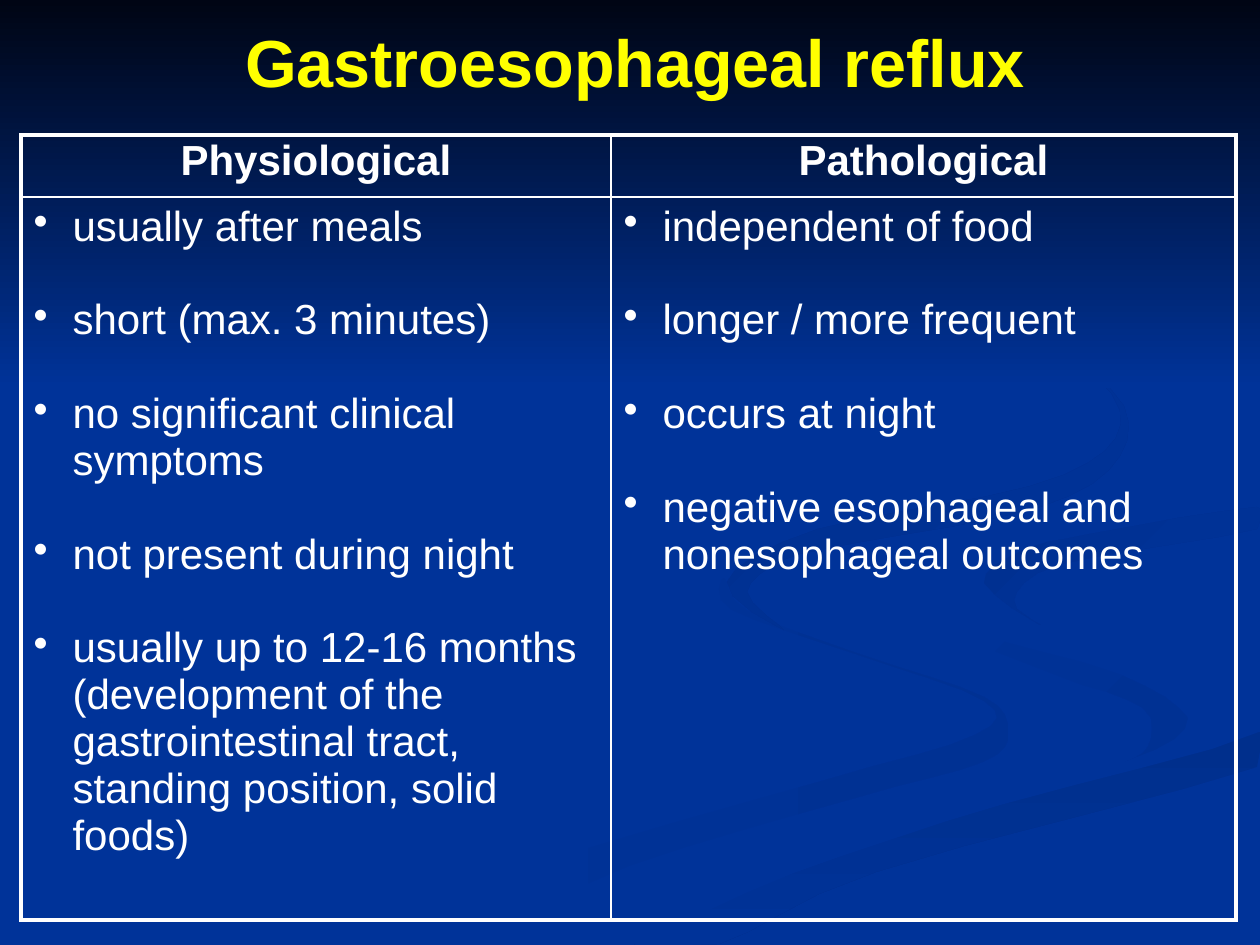
from lxml import etree
from pptx import Presentation
from pptx.dml.color import RGBColor
from pptx.enum.shapes import MSO_SHAPE
from pptx.enum.text import MSO_ANCHOR, PP_ALIGN
from pptx.oxml.ns import qn
from pptx.util import Emu, Pt

RECTANGLE = MSO_SHAPE.RECTANGLE
MIDDLE = MSO_ANCHOR.MIDDLE
CENTER, LEFT = PP_ALIGN.CENTER, PP_ALIGN.LEFT
SCALE = 914400 / 126
WHITE, YELLOW, BLUE = "FFFFFF", "FFFF00", "003399"
INDENT = 39
CURVE_STEPS = 4


def color(value):
    return RGBColor.from_string(value)


def write_text(paragraph, text, size=24, hue=WHITE, bold=False, align=LEFT):
    paragraph.alignment = align
    run = paragraph.add_run()
    run.text = text
    run.font.name = "Arial"
    run.font.size = Pt(size)
    run.font.bold = bold
    run.font.color.rgb = color(hue)


presentation = Presentation()
presentation.slide_width = Emu(round(1260 * SCALE))
presentation.slide_height = Emu(round(945 * SCALE))
slide = presentation.slides.add_slide(presentation.slide_layouts[6])
slide.background.fill.solid()
slide.background.fill.fore_color.rgb = color(BLUE)

ribbons = [
    (BLUE, "003193", 0, [
        (984, 697), (859, 654), (748, 611), (724, 578), (732, 610), (856, 654),
        (984, 701), (975, 735), (822, 781), (525, 869), (378, 944), (455, 944),
        (629, 866), (852, 799), (983, 762), (1008, 732)]),
    (BLUE, "003193", 45, [
        (1188, 718), (1119, 674), (955, 627), (912, 585), (931, 622), (1056, 675),
        (1143, 708), (1148, 747), (1126, 762), (1166, 747)]),
    ("002F8C", BLUE, 90, [
        (634, 944), (719, 944), (876, 872), (1257, 767), (1257, 732), (1004, 804),
        (794, 873)]),
    (BLUE, BLUE, 0, [
        (914, 585), (956, 627), (1120, 674), (1188, 718), (1124, 762), (887, 825),
        (601, 944), (634, 944), (794, 873), (1004, 804), (1259, 732), (1259, 678),
        (1068, 634), (984, 583), (1036, 547), (1259, 507), (1259, 488), (993, 532),
        (922, 562)]),
    ("003091", BLUE, 45, [
        (984, 583), (1041, 625), (1014, 600), (1062, 564), (1257, 529), (1257, 507),
        (1090, 534), (1021, 551)]),
    ("002F8E", BLUE, 45, [
        (861, 542), (1040, 507), (1120, 456), (1109, 387), (960, 294), (1096, 377),
        (1116, 438), (1031, 486), (818, 529), (727, 582), (784, 630), (747, 592),
        (786, 559)]),
]
backdrop = []
for start, end, angle, anchors in ribbons:
    outline = []
    for index, current in enumerate(anchors):
        before = anchors[index - 1]
        following, beyond = [anchors[(index + ahead) % len(anchors)] for ahead in (1, 2)]
        for step in range(CURVE_STEPS):
            t = step / CURVE_STEPS
            outline.append([
                (2 * b + (c - a) * t + (2 * a - 5 * b + 4 * c - d) * t ** 2
                 + (3 * b - a - 3 * c + d) * t ** 3) / 2
                for a, b, c, d in zip(before, current, following, beyond)])
    points = [(min(x, 1260), min(y, 945)) for x, y in outline]
    builder = slide.shapes.build_freeform(*points[0], scale=SCALE)
    builder.add_line_segments(points[1:], close=True)
    backdrop.append((builder.convert_to_shape(), start, end, angle))

top_shade = slide.shapes.add_shape(
    RECTANGLE, 0, 0, presentation.slide_width, Emu(round(388 * SCALE)))
backdrop.append((top_shade, "000514", BLUE, 90))

for shape, start, end, angle in backdrop:
    shape.shadow.inherit = False
    shape.line.fill.background()
    if start == end:
        shape.fill.solid()
        shape.fill.fore_color.rgb = color(start)
        continue
    shape.fill.gradient()
    shape.fill.gradient_angle = (360 - angle) % 360
    for stop, hue in zip(shape.fill.gradient_stops, (start, end)):
        stop.color.rgb = color(hue)

title = slide.shapes.add_textbox(*[Emu(round(px * SCALE)) for px in (25, 16, 1221, 90)])
title.text_frame.word_wrap = True
title.text_frame.vertical_anchor = MIDDLE
write_text(title.text_frame.paragraphs[0], "Gastroesophageal reflux",
           size=38, hue=YELLOW, bold=True, align=CENTER)

columns = [
    (590, "Physiological", [
        "usually after meals",
        "short (max. 3 minutes)",
        "no significant clinical symptoms",
        "not present during night",
        "usually up to 12-16 months (development of the gastrointestinal tract, "
        "standing position, solid foods)"]),
    (625, "Pathological", [
        "independent of food",
        "longer / more frequent",
        "occurs at night",
        "negative esophageal and nonesophageal outcomes"]),
]
row_heights = [62, 723]
table = slide.shapes.add_table(
    2, 2, *[Emu(round(px * SCALE)) for px in (21, 135, 1215, sum(row_heights))]).table
table.first_row = False
table.horz_banding = False
for row, height in zip(table.rows, row_heights):
    row.height = Emu(round(height * SCALE))

for column_index, (width, heading, items) in enumerate(columns):
    table.columns[column_index].width = Emu(round(width * SCALE))
    header, body = [table.cell(row_index, column_index) for row_index in range(2)]
    header_paragraph = header.text_frame.paragraphs[0]
    header_paragraph.line_spacing = 0.9
    write_text(header_paragraph, heading, bold=True, align=CENTER)

    for item_index, item in enumerate(items):
        frame = body.text_frame
        paragraph = frame.add_paragraph() if item_index else frame.paragraphs[0]
        write_text(paragraph, item)
        if item_index < len(items) - 1:
            paragraph.space_after = Pt(26.8)
        properties = paragraph._p.get_or_add_pPr()
        properties.set("marL", str(round(INDENT * SCALE)))
        properties.set("indent", str(-round(INDENT * SCALE)))
        etree.SubElement(properties, qn("a:buChar")).set("char", "•")

    for row_index, cell in enumerate((header, body)):
        cell.fill.background()
        outer_sides = {"L": column_index == 0, "R": column_index == 1,
                       "T": row_index == 0, "B": row_index == 1}
        cell_properties = cell._tc.get_or_add_tcPr()
        for position, (side, outer) in enumerate(outer_sides.items()):
            border = etree.Element(qn("a:ln" + side))
            border.set("w", str(int(Pt(2.25 if outer else 1))))
            line_fill = etree.SubElement(border, qn("a:solidFill"))
            etree.SubElement(line_fill, qn("a:srgbClr")).set("val", WHITE)
            cell_properties.insert(position, border)

presentation.save("out.pptx")
